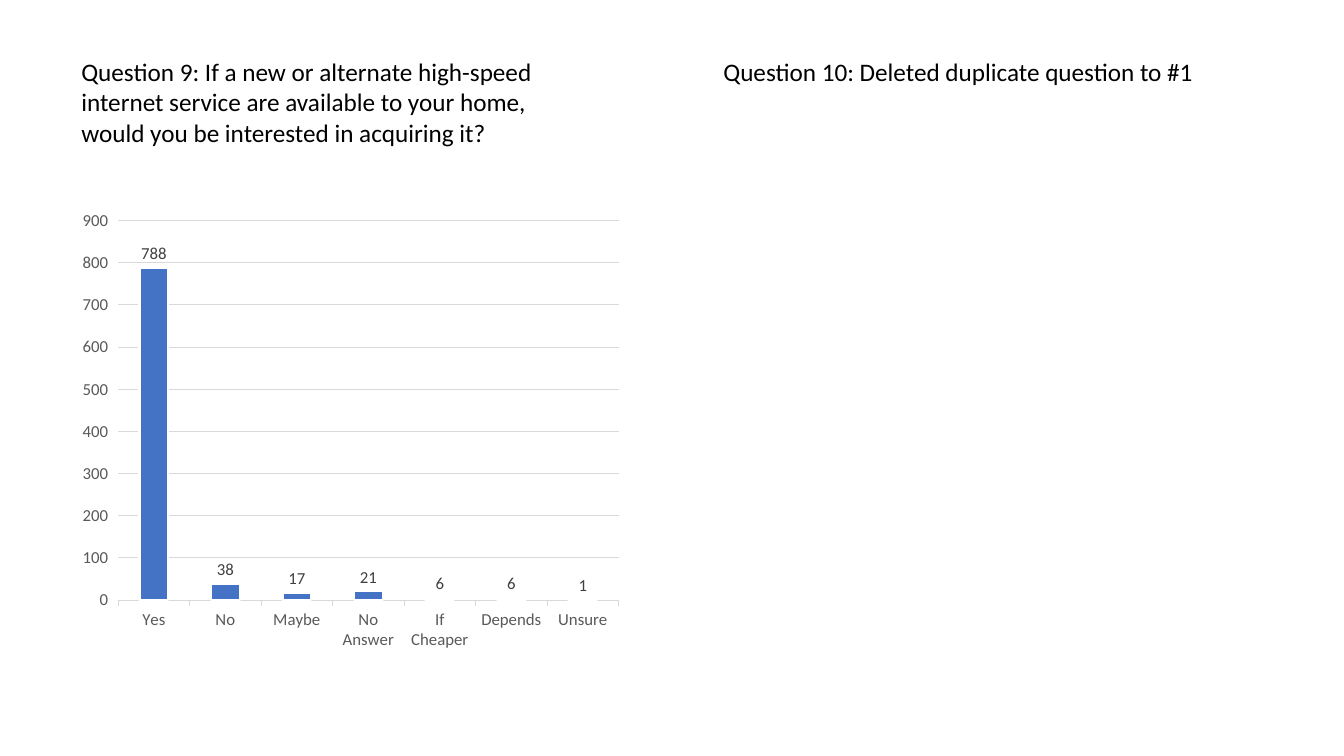
from dataclasses import dataclass

import pptx
import pptx.chart.data
import pptx.dml.color
import pptx.enum.chart
import pptx.enum.text
import pptx.util
from pptx.util import Cm

COLORS = {
    "text": "000000",
    "axis_text": "595959",
    "label_text": "404040",
    "rule": "D9D9D9",
    "bar": "4472C4",
    "bar_edge": "FFFFFF",
}
FONT = "Calibri"
TOP = 1.3
LEFT = 1.8
COLUMN_WIDTH = 14.07

ANSWERS = {
    "Yes": 788,
    "No": 38,
    "Maybe": 17,
    "No Answer": 21,
    "If Cheaper": 6,
    "Depends": 6,
    "Unsure": 1,
}


@dataclass
class Question:
    left: float
    width: float
    height: float
    lines: list[str]


QUESTIONS = [
    Question(LEFT, COLUMN_WIDTH, 2.57, [
        "Question 9: If a new or alternate high-speed internet service are available to your home,",
        "would you be interested in acquiring it?",
    ]),
    Question(17.98, 12.93, 1.02, ["Question 10: Deleted duplicate question to #1"]),
]


def rgb(name: str) -> pptx.dml.color.RGBColor:
    return pptx.dml.color.RGBColor.from_string(COLORS[name])


def set_font(font, size: float, color: str) -> None:
    for attr, value in {"name": FONT, "size": pptx.util.Pt(size)}.items():
        setattr(font, attr, value)
    font.color.rgb = rgb(color)


def set_line(line, color: str, width: float) -> None:
    line.color.rgb = rgb(color)
    line.width = pptx.util.Pt(width)


def add_question(s, q: Question) -> None:
    tf = s.shapes.add_textbox(Cm(q.left), Cm(TOP), Cm(q.width), Cm(q.height)).text_frame
    tf.word_wrap = True
    tf.auto_size = pptx.enum.text.MSO_AUTO_SIZE.SHAPE_TO_FIT_TEXT
    for i, text in enumerate(q.lines):
        p = tf.add_paragraph() if i else tf.paragraphs[0]
        r = p.add_run()
        r.text = text
        set_font(r.font, 18, "text")


def add_answer_chart(s) -> None:
    data = pptx.chart.data.CategoryChartData()
    data.categories = list(ANSWERS)
    data.add_series("Series 1", list(ANSWERS.values()))
    chart = s.shapes.add_chart(
        pptx.enum.chart.XL_CHART_TYPE.COLUMN_CLUSTERED,
        Cm(LEFT), Cm(5.08), Cm(COLUMN_WIDTH), Cm(11.53), data,
    ).chart
    chart.has_legend = False
    chart.has_title = False
    set_font(chart.font, 10, "text")

    # Axes
    for axis in (chart.category_axis, chart.value_axis):
        axis.major_tick_mark = pptx.enum.chart.XL_TICK_MARK.OUTSIDE
        set_font(axis.tick_labels.font, 12, "axis_text")
    set_line(chart.category_axis.format.line, "rule", 0.75)
    chart.value_axis.format.line.fill.background()
    set_line(chart.value_axis.major_gridlines.format.line, "rule", 0.75)
    scale = {"minimum_scale": 0, "maximum_scale": 900, "major_unit": 100}
    for attr, value in scale.items():
        setattr(chart.value_axis, attr, value)

    # Bars
    plot = chart.plots[0]
    plot.gap_width = 150
    plot.vary_by_categories = False
    series = plot.series[0]
    series.format.fill.solid()
    series.format.fill.fore_color.rgb = rgb("bar")
    set_line(series.format.line, "bar_edge", 1.5)

    # Value labels
    labels = series.data_labels
    label_format = {
        "show_value": True,
        "position": pptx.enum.chart.XL_LABEL_POSITION.OUTSIDE_END,
    }
    for attr, value in label_format.items():
        setattr(labels, attr, value)
    set_font(labels.font, 12, "label_text")


def main() -> None:
    prs = pptx.Presentation()
    prs.slide_width, prs.slide_height = Cm(33.87), Cm(19.05)
    s = prs.slides.add_slide(prs.slide_layouts[6])
    add_answer_chart(s)
    for q in QUESTIONS:
        add_question(s, q)
    prs.save("out.pptx")


if __name__ == "__main__":
    main()
